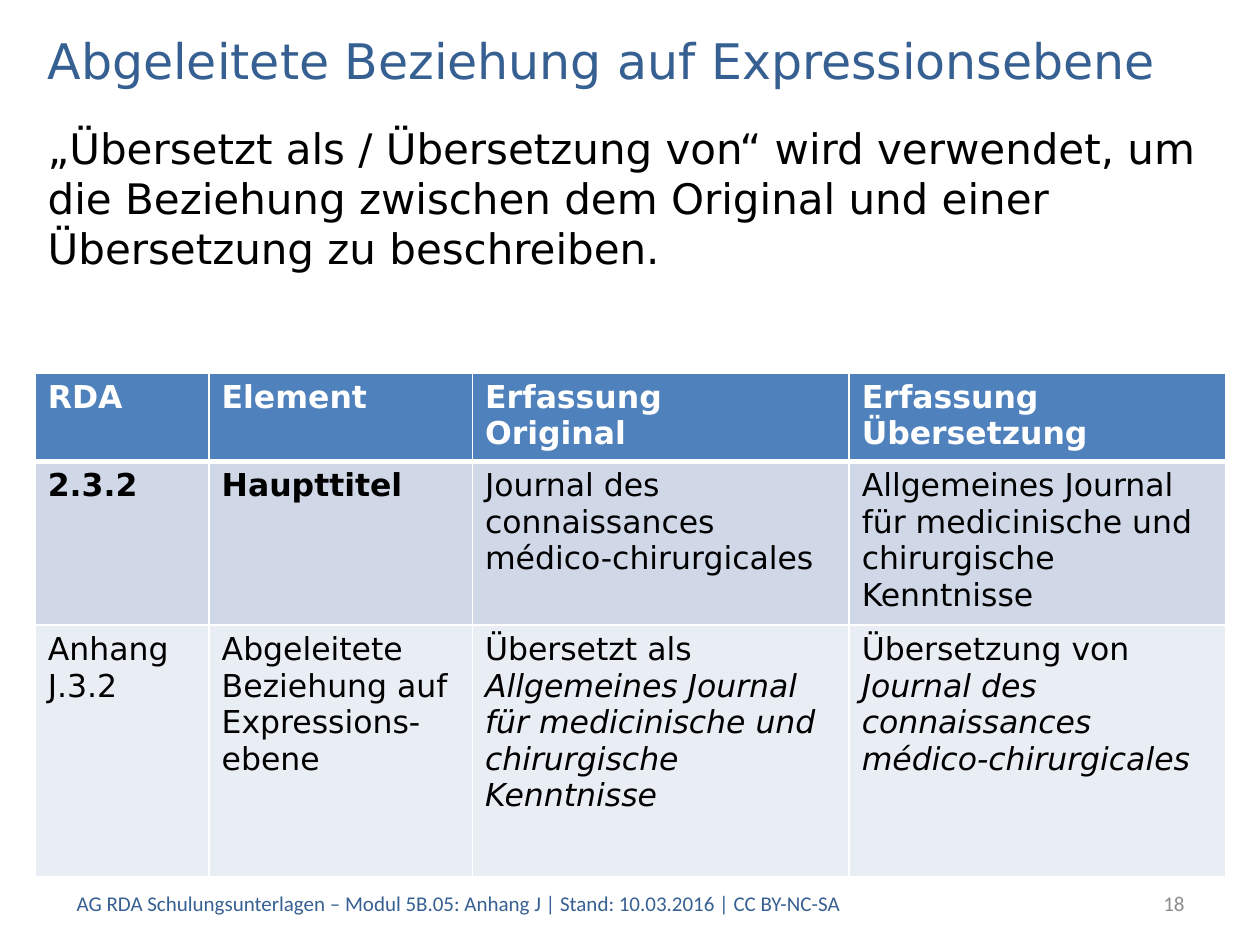
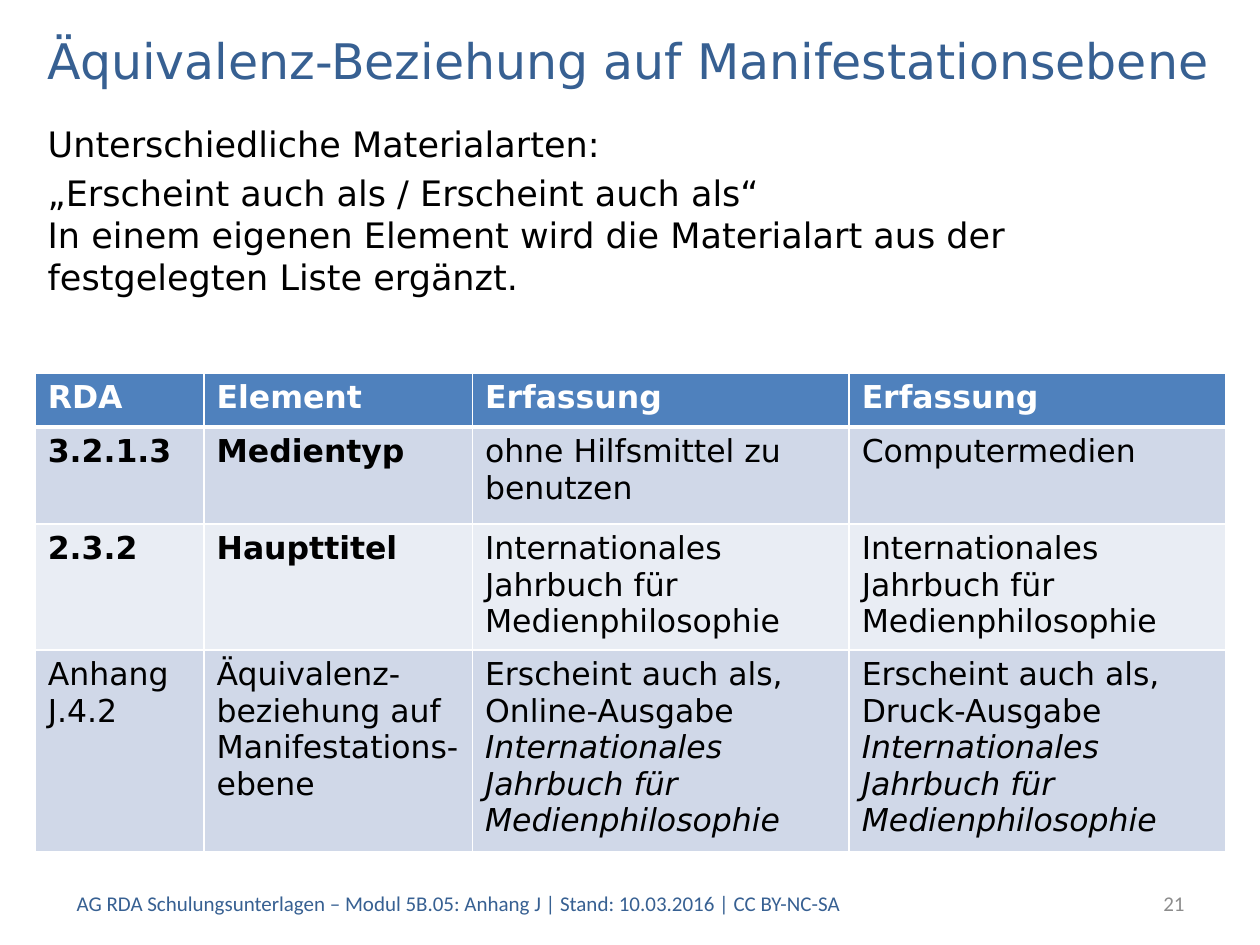
import pptx
import pptx.util
import pptx.dml.color
import pptx.enum.text
import pptx.oxml
import pptx.oxml.ns

Inches = pptx.util.Inches
Pt = pptx.util.Pt
RGBColor = pptx.dml.color.RGBColor
ANCHOR = pptx.enum.text.MSO_ANCHOR
ALIGN = pptx.enum.text.PP_ALIGN

NAVY = RGBColor(0x37, 0x60, 0x92)
BLUE = RGBColor(0x4F, 0x81, 0xBD)
DARK = RGBColor(0xD0, 0xD8, 0xE8)
PALE = RGBColor(0xE9, 0xED, 0xF4)
GREY = RGBColor(0x8C, 0x8C, 0x8C)
BLACK = RGBColor(0, 0, 0)
WHITE = RGBColor(0xFF, 0xFF, 0xFF)

SANS = "DejaVu Sans"
LEFT, WIDTH = 0.28, 9.45
FOOTER = "AG RDA Schulungsunterlagen – Modul 5B.05: Anhang J | Stand: 10.03.2016 | CC BY-NC-SA"
YEARBOOK = "Internationales Jahrbuch für Medienphilosophie"
FRENCH = "Journal des connaissances médico-chirurgicales"
GERMAN = "Allgemeines Journal für medicinische und chirurgische Kenntnisse"

# In table cells "|" starts a paragraph and "*" starts italics.
PAGES = [
    {
        "title": "Abgeleitete Beziehung auf Expressionsebene",
        "body": ["„Übersetzt als / Übersetzung von“ wird verwendet, um die Beziehung "
                 "zwischen dem Original und einer Übersetzung zu beschreiben."],
        "size": 24,
        "number": "18",
        "cols": [1.38, 2.09, 2.99, 2.99],
        "rows": [0.67, 1.25, 2],
        "cells": [
            ["RDA", "Element", "Erfassung|Original", "Erfassung|Übersetzung"],
            ["2.3.2", "Haupttitel", FRENCH, GERMAN],
            ["Anhang\nJ.3.2", "Abgeleitete Beziehung auf Expressions-\nebene",
             "Übersetzt als\n*" + GERMAN, "Übersetzung von\n*" + FRENCH],
        ],
    },
    {
        "title": "Äquivalenz-Beziehung auf Manifestationsebene",
        "body": ["Unterschiedliche Materialarten:",
                 "„Erscheint auch als / Erscheint auch als“\nIn einem eigenen Element "
                 "wird die Materialart aus der festgelegten Liste ergänzt."],
        "size": 20,
        "number": "21",
        "cols": [1.34, 2.13, 2.99, 2.99],
        "rows": [0.43, 0.77, 0.98, 1.59],
        "cells": [
            ["RDA", "Element", "Erfassung", "Erfassung"],
            ["3.2.1.3", "Medientyp", "ohne Hilfsmittel zu benutzen", "Computermedien"],
            ["2.3.2", "Haupttitel", YEARBOOK, YEARBOOK],
            ["Anhang J.4.2", "Äquivalenz-beziehung auf Manifestations-ebene",
             "Erscheint auch als,\nOnline-Ausgabe\n*" + YEARBOOK,
             "Erscheint auch als,\nDruck-Ausgabe\n*" + YEARBOOK],
        ],
    },
]


def write(frame, paras, size, color, name=SANS, bold=False):
    """Fill a text frame; newlines become line breaks, "*" starts italics."""
    frame.word_wrap = True
    for i, text in enumerate(paras):
        par = frame.paragraphs[0] if i == 0 else frame.add_paragraph()
        for j, part in enumerate(text.split("*")):
            look = {"size": Pt(size), "name": name, "bold": bold, "italic": j > 0}
            for k, line in enumerate(part.split("\n")):
                if k:
                    par.add_line_break()
                if line:
                    run = par.add_run()
                    run.text = line
                    run.font.color.rgb = color
                    for key, value in look.items():
                        setattr(run.font, key, value)


def border(cell, widths):
    """Draw white cell edges, widths in points by side."""
    props = cell._tc.get_or_add_tcPr()
    for side, width in widths.items():
        props.append(pptx.oxml.parse_xml(
            f'<a:ln{side} {pptx.oxml.ns.nsdecls("a")} w="{Pt(width)}">'
            f'<a:solidFill><a:srgbClr val="{WHITE}"/></a:solidFill></a:ln{side}>'))


deck = pptx.Presentation()
deck.slide_width, deck.slide_height = Inches(10), Inches(7.5)

for page in PAGES:
    slide = deck.slides.add_slide(deck.slide_layouts[6])

    boxes = [
        ((LEFT, 0.2, WIDTH, 0.55), [page["title"]], 28, NAVY, SANS, ANCHOR.MIDDLE),
        ((LEFT, 0.92, WIDTH, 5.98), page["body"], page["size"], BLACK, SANS, ANCHOR.TOP),
        ((0.51, 6.97, 6.69, 0.4), [FOOTER], 12, NAVY, "Calibri", ANCHOR.MIDDLE),
        ((7.91, 6.97, 1.59, 0.4), [page["number"]], 12, GREY, "Calibri", ANCHOR.MIDDLE),
    ]
    for place, paras, size, color, name, anchor in boxes:
        frame = slide.shapes.add_textbox(*map(Inches, place)).text_frame
        frame.vertical_anchor = anchor
        write(frame, paras, size, color, name)
        for par in frame.paragraphs[1:]:
            par.space_before = Pt(size * 0.2)
    frame.paragraphs[0].alignment = ALIGN.RIGHT

    cols, rows = page["cols"], page["rows"]
    table = slide.shapes.add_table(
        len(rows), len(cols), Inches(LEFT), Inches(2.96),
        Inches(WIDTH), Inches(sum(rows))).table
    for col, width in zip(table.columns, cols):
        col.width = Inches(width)
    for r, (height, texts) in enumerate(zip(rows, page["cells"])):
        table.rows[r].height = Inches(height)
        head, last = r == 0, r == len(rows) - 1
        fill = BLUE if head else DARK if r % 2 else PALE
        for c, text in enumerate(texts):
            cell = table.cell(r, c)
            border(cell, {"L": 1, "R": 1, "T": 3 if r == 1 else 1, "B": 3 if head else 1})
            cell.fill.solid()
            cell.fill.fore_color.rgb = fill
            write(cell.text_frame, text.split("|"), 18, WHITE if head else BLACK,
                  bold=head or (c < 2 and not last))

deck.save("out.pptx")
